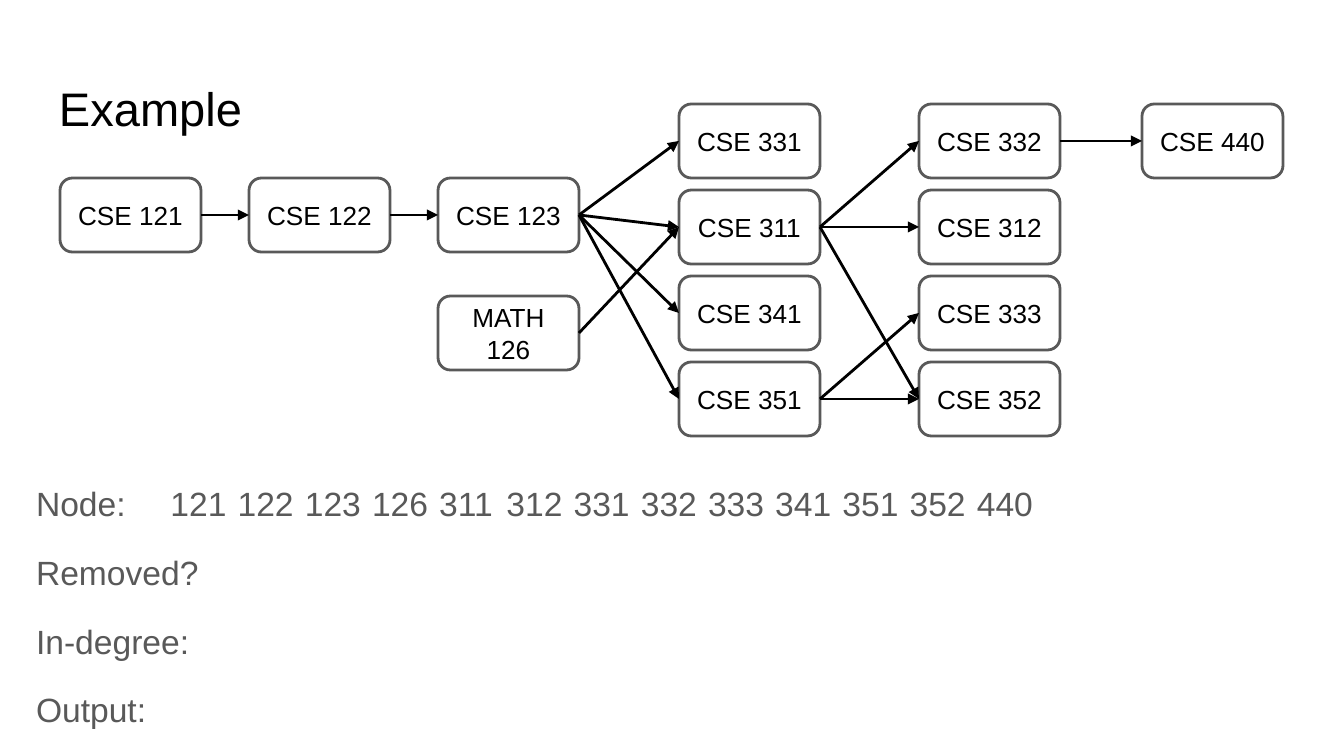
from dataclasses import dataclass

from lxml import etree
from pptx import Presentation
from pptx.dml.color import RGBColor
from pptx.enum.shapes import MSO_CONNECTOR, MSO_SHAPE
from pptx.enum.text import MSO_ANCHOR, MSO_AUTO_SIZE, PP_ALIGN
from pptx.oxml.ns import qn
from pptx.util import Pt

ROUND = MSO_SHAPE.ROUNDED_RECTANGLE
STRAIGHT = MSO_CONNECTOR.STRAIGHT
TOP, MIDDLE = MSO_ANCHOR.TOP, MSO_ANCHOR.MIDDLE
LEFT, CENTER = PP_ALIGN.LEFT, PP_ALIGN.CENTER
FIXED = MSO_AUTO_SIZE.NONE
EAST, WEST = 3, 1  # connection sites on a rectangle


@dataclass(frozen=True)
class Theme:
    font: str = "Arial"
    ink: RGBColor = RGBColor(0, 0, 0)
    gray: RGBColor = RGBColor(0x59, 0x59, 0x59)
    title: float = 25.2
    body: float = 18
    node: float = 14
    line: float = 1.5
    inset: int = 13


THEME = Theme()

NODE_W, NODE_H = 141, 74
COLS = (0, 189, 378, 619, 859, 1082)
ROW_STEP = 86
MAIN_Y, MATH_Y = 74, 192

# Course name -> (column, top within the graph)
NODES = {
    "CSE 121": (0, MAIN_Y),
    "CSE 122": (1, MAIN_Y),
    "CSE 123": (2, MAIN_Y),
    "MATH 126": (2, MATH_Y),
    "CSE 440": (5, 0),
}
STACKS = {
    3: ("CSE 331", "CSE 311", "CSE 341", "CSE 351"),
    4: ("CSE 332", "CSE 312", "CSE 333", "CSE 352"),
}
for col, names in STACKS.items():
    NODES.update({name: (col, row * ROW_STEP) for row, name in enumerate(names)})

EDGES = {
    "CSE 121": ("CSE 122",),
    "CSE 122": ("CSE 123",),
    "CSE 123": STACKS[3],
    "MATH 126": ("CSE 311",),
    "CSE 311": ("CSE 332", "CSE 312", "CSE 352"),
    "CSE 351": ("CSE 333", "CSE 352"),
    "CSE 332": ("CSE 440",),
}

LABELS = ("Removed?", "In-degree:", "Output:")
TAB_X, TAB_STEP = 172, 84


def px(n):
    return round(n * 914400 / 134.4)


def place(shape, box):
    shape.left, shape.top, shape.width, shape.height = map(px, box)


def write(frame, text, size, color, align=LEFT, anchor=TOP, space=1.0, before=0):
    """Fill the frame, one paragraph per line; before is the gap between them."""
    frame.word_wrap = True
    frame.auto_size = FIXED
    frame.vertical_anchor = anchor
    frame.margin_left = frame.margin_right = px(THEME.inset)
    frame.margin_top = frame.margin_bottom = px(THEME.inset)
    for i, line in enumerate(text.split("\n")):
        para = frame.add_paragraph() if i else frame.paragraphs[0]
        para.alignment = align
        para.line_spacing = space
        para.space_before = Pt(before if i else 0)
        run = para.add_run()
        run.text = line
        run.font.name = THEME.font
        run.font.size = Pt(size)
        run.font.color.rgb = color


def heading(slide, box):
    title = slide.shapes.title
    place(title, box)
    write(title.text_frame, "Example", THEME.title, THEME.ink)


def trace(slide, box):
    """List the rows of the worked trace, with the node numbers on tab stops."""
    body = slide.placeholders[1]
    place(body, box)
    ids = sorted(name.split()[1] for name in NODES)
    head = "\t".join(["Node:", *ids])
    write(body.text_frame, "\n".join([head, *LABELS]), THEME.body, THEME.gray,
          space=1.15, before=12)
    paras = body.text_frame.paragraphs
    paras[-1].space_after = Pt(12)
    for para in paras:
        props = para._p.get_or_add_pPr()
        props.set("marL", "0")
        props.set("indent", "0")
        etree.SubElement(props, qn("a:buNone"))
    tabs = etree.SubElement(paras[0]._p.get_or_add_pPr(), qn("a:tabLst"))
    for i in range(len(ids)):
        etree.SubElement(tabs, qn("a:tab"), pos=str(px(TAB_X + i * TAB_STEP)), algn="l")


def node(slide, name, box):
    shape = slide.shapes.add_shape(ROUND, *map(px, box))
    shape.shadow.inherit = False
    shape.fill.background()
    shape.line.color.rgb = THEME.gray
    shape.line.width = Pt(THEME.line)
    write(shape.text_frame, name, THEME.node, THEME.ink, align=CENTER, anchor=MIDDLE)
    return shape


def arrow(slide, start, end):
    link = slide.shapes.add_connector(STRAIGHT, 0, 0, 0, 0)
    link.begin_connect(start, EAST)
    link.end_connect(end, WEST)
    link.line.color.rgb = THEME.ink
    link.line.width = Pt(THEME.line)
    etree.SubElement(link.line._get_or_add_ln(), qn("a:tailEnd"), type="triangle")
    etree.SubElement(link._element.spPr, qn("a:effectLst"))


def graph(slide, box):
    left, top = box[:2]
    shapes = {
        name: node(slide, name, (left + COLS[col], top + y, NODE_W, NODE_H))
        for name, (col, y) in NODES.items()
    }
    for start, ends in EDGES.items():
        for end in ends:
            arrow(slide, shapes[start], shapes[end])


def main():
    deck = Presentation()
    deck.slide_width, deck.slide_height = px(1344), px(756)
    slide = deck.slides.add_slide(deck.slide_layouts[1])
    heading(slide, (46, 66, 1252, 84))
    trace(slide, (23, 464, 1298, 292))
    graph(slide, (60, 104, 1223, 332))
    deck.save("out.pptx")


if __name__ == "__main__":
    main()
